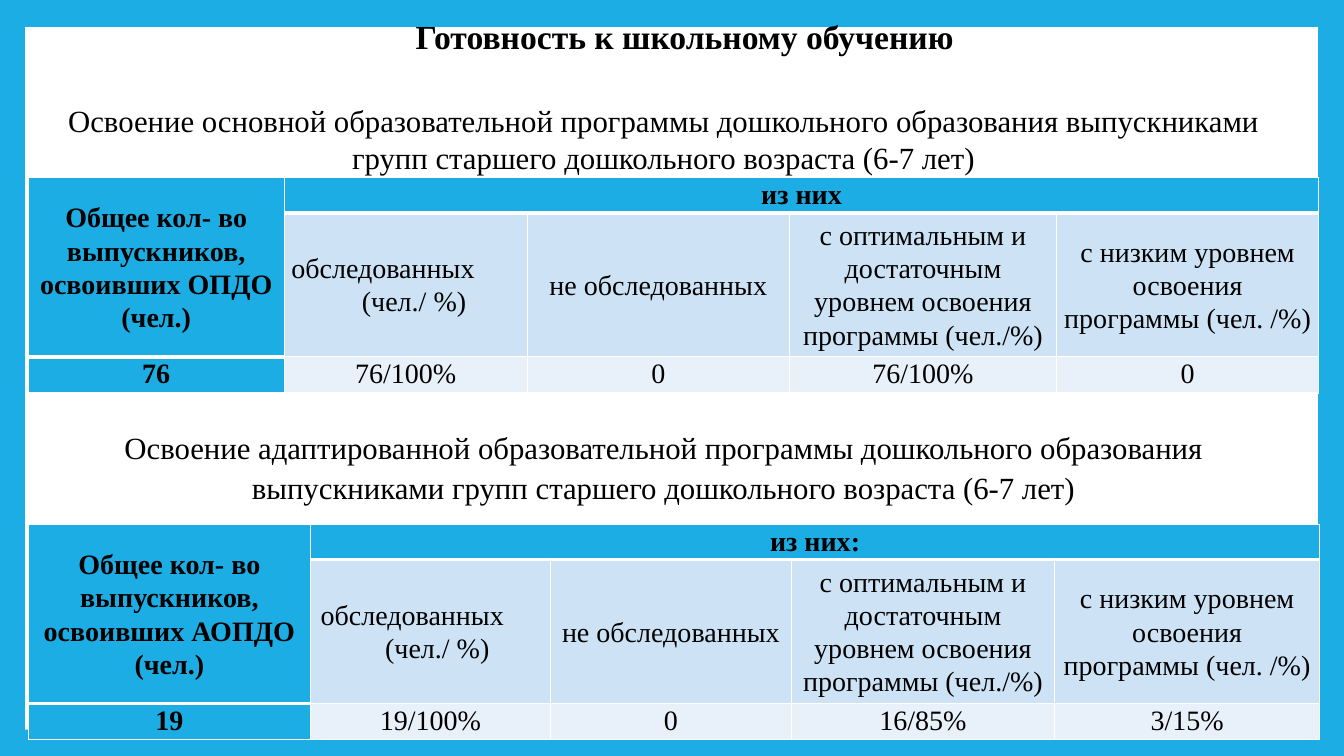
from lxml.etree import SubElement
from pptx import Presentation
from pptx.dml.color import RGBColor
from pptx.enum.shapes import MSO_SHAPE
from pptx.enum.text import MSO_ANCHOR, PP_ALIGN
from pptx.oxml.ns import qn
from pptx.util import Inches, Pt

BLUE, PALE, LIGHT, WHITE, BLACK = "1CADE4", "CDE3F5", "E8F1FA", "FFFFFF", "000000"
FONT = "Times New Roman"
LEFT, WIDTH = 0.28, 12.6
TITLE = "Готовность к школьному обучению"
HEADS = [
    "обследованных (чел./ %)",
    "не обследованных",
    "с оптимальным и достаточным уровнем освоения программы (чел./%)",
    "с низким уровнем освоения программы (чел. /%)",
]
PARTS = [
    {
        "text": "Освоение основной образовательной программы дошкольного образования "
                "выпускниками групп старшего дошкольного возраста (6-7 лет)",
        "text_top": 0.96, "spacing": 1.0, "top": 1.76,
        "total": "Общее кол- во выпускников, освоивших ОПДО (чел.)",
        "group": "из них",
        "values": ["76", "76/100%", "0", "76/100%", "0"],
        "cols": [2.54, 2.41, 2.6, 2.65, 2.6],
        "hang": (0.7, 0),
    },
    {
        "text": "Освоение адаптированной образовательной программы дошкольного образования "
                "выпускниками групп старшего дошкольного возраста (6-7 лет)",
        "text_top": 4.18, "spacing": 1.07, "top": 5.2,
        "total": "Общее кол- во выпускников, освоивших АОПДО (чел.)",
        "group": "из них:",
        "values": ["19", "19/100%", "0", "16/85%", "3/15%"],
        "cols": [2.8, 2.38, 2.39, 2.61, 2.63],
        "hang": (0.67, 0.03),
    },
]
ROWS = [0.35, 1.43, 0.36]


def color(code):
    return RGBColor.from_string(code)


def write(frame, text, size, bold=False, spacing=1.0):
    frame.word_wrap = True
    para = frame.paragraphs[0]
    para.text = text
    para.alignment = PP_ALIGN.CENTER
    para.line_spacing = spacing
    font = para.font
    font.name, font.size, font.bold = FONT, Pt(size), bold
    font.color.rgb = color(BLACK)
    return para


def border(cell, bottom):
    """Draw white edges; they must precede the fill in the cell XML."""
    props = cell._tc.get_or_add_tcPr()
    for side in "LRTB":
        width = bottom if side == "B" else 1
        line = SubElement(props, qn(f"a:ln{side}"), w=str(Pt(width)))
        SubElement(SubElement(line, qn("a:solidFill")), qn("a:srgbClr"), val=WHITE)


def add_grid(slide, part):
    cols = part["cols"]
    grid = slide.shapes.add_table(
        len(ROWS), len(cols), Inches(LEFT), Inches(part["top"]),
        Inches(sum(cols)), Inches(sum(ROWS))).table
    grid.first_col = True
    grid.horz_banding = False
    for col, width in zip(grid.columns, cols):
        col.width = Inches(width)
    for row, height in zip(grid.rows, ROWS):
        row.height = Inches(height)

    texts = [[part["total"], part["group"], "", "", ""], ["", *HEADS], part["values"]]
    for r, row in enumerate(texts):
        for c, text in enumerate(row):
            cell = grid.cell(r, c)
            head = r == 0 or c == 0
            border(cell, 3 if r == 0 or (r, c) == (1, 0) else 1)
            cell.fill.solid()
            cell.fill.fore_color.rgb = color(BLUE if head else PALE if r == 1 else LIGHT)
            cell.margin_left = cell.margin_right = Inches(0.07)
            cell.margin_top = cell.margin_bottom = 0
            cell.vertical_anchor = MSO_ANCHOR.TOP if r == 2 else MSO_ANCHOR.MIDDLE
            if text:
                spacing = 1.0 if (r, c) == (0, 1) else 1.07
                write(cell.text_frame, text, 20, head, spacing)
    grid.cell(0, 0).merge(grid.cell(1, 0))
    grid.cell(0, 1).merge(grid.cell(0, len(cols) - 1))

    hang, start = part["hang"]
    para = grid.cell(1, 1).text_frame.paragraphs[0]
    para.alignment = PP_ALIGN.LEFT
    props = para._p.get_or_add_pPr()
    props.set("marL", str(Inches(hang)))
    props.set("indent", str(Inches(start - hang)))


def main():
    deck = Presentation()
    deck.slide_width, deck.slide_height = Inches(13.33), Inches(7.5)
    slide = deck.slides.add_slide(deck.slide_layouts[5])
    slide.background.fill.solid()
    slide.background.fill.fore_color.rgb = color(BLUE)

    panel = slide.shapes.add_shape(
        MSO_SHAPE.RECTANGLE, Inches(0.25), Inches(0.27), Inches(12.82), Inches(6.97))
    panel.shadow.inherit = False
    panel.fill.solid()
    panel.fill.fore_color.rgb = color(WHITE)
    panel.line.fill.background()

    title = slide.shapes.title
    tree = slide.shapes._spTree
    tree.remove(panel._element)
    tree.insert(2, panel._element)
    title.left, title.top = Inches(0.49), Inches(0.08)
    title.width, title.height = Inches(WIDTH), Inches(0.55)
    title.text_frame.vertical_anchor = MSO_ANCHOR.MIDDLE
    write(title.text_frame, TITLE, 24, True)

    for part in PARTS:
        box = slide.shapes.add_textbox(
            Inches(LEFT), Inches(part["text_top"]), Inches(WIDTH), Inches(0.85))
        write(box.text_frame, part["text"], 22, spacing=part["spacing"])
        add_grid(slide, part)

    deck.save("out.pptx")


if __name__ == "__main__":
    main()
